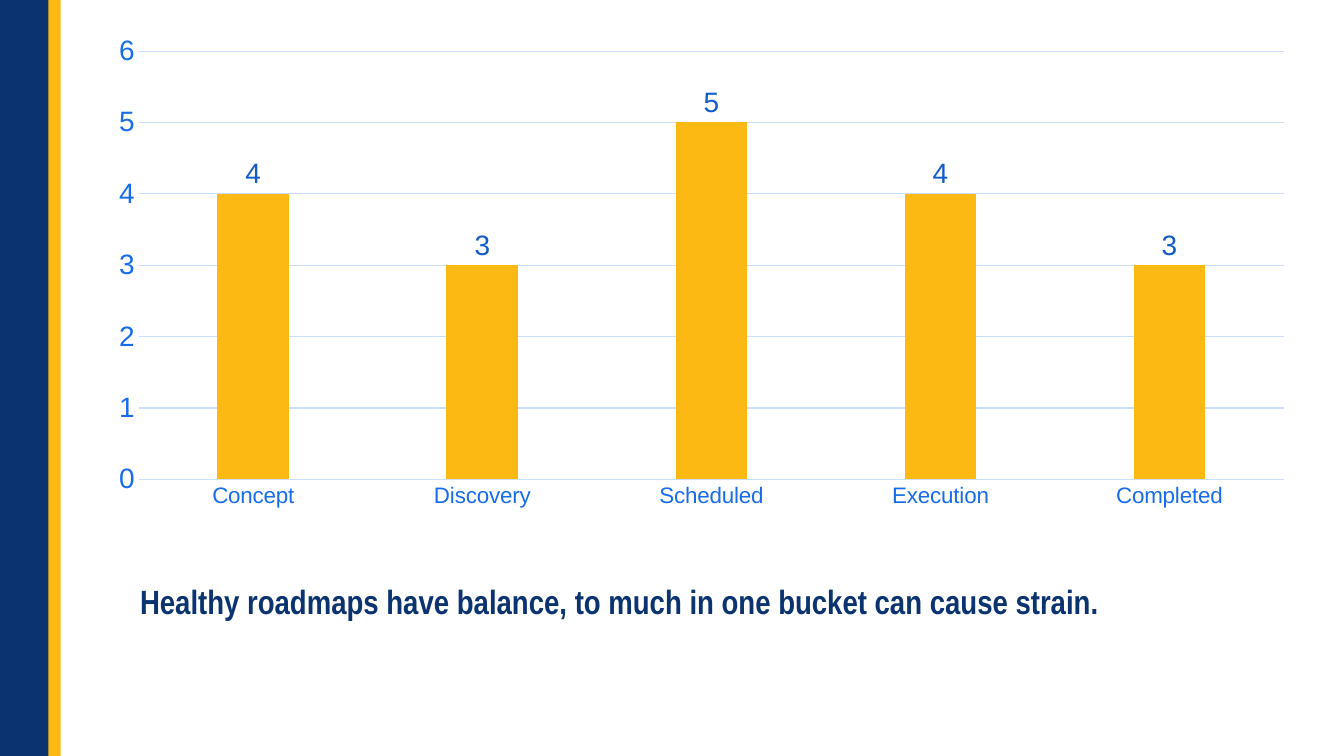
"""Build a slide charting roadmap items per stage, with a takeaway line."""
from dataclasses import dataclass

from pptx import Presentation
from pptx.chart.axis import CategoryAxis, ValueAxis
from pptx.chart.data import CategoryChartData
from pptx.dml.color import RGBColor
from pptx.enum.chart import XL_CHART_TYPE, XL_LABEL_POSITION, XL_TICK_MARK
from pptx.enum.shapes import MSO_SHAPE
from pptx.enum.text import MSO_ANCHOR
from pptx.slide import Slide
from pptx.text.text import Font
from pptx.util import Cm, Pt

COLUMNS = XL_CHART_TYPE.COLUMN_CLUSTERED
OUTSIDE_END = XL_LABEL_POSITION.OUTSIDE_END
NO_TICK = XL_TICK_MARK.NONE
RECTANGLE = MSO_SHAPE.RECTANGLE
MIDDLE = MSO_ANCHOR.MIDDLE

COLORS = {
    "navy": "0A3370",
    "gold": "FDB913",
    "axis": "176CEA",
    "value": "125CC9",
    "grid": "CADDFA",
}
SLIDE_WIDTH, SLIDE_HEIGHT = 33.87, 19.05
TAKEAWAY = "Healthy roadmaps have balance, to much in one bucket can cause strain."


@dataclass(frozen=True)
class Stripe:
    left: float
    width: float
    color: str


@dataclass(frozen=True)
class Stage:
    name: str
    items: int


STRIPES = [Stripe(0, 1.24, "navy"), Stripe(1.22, 0.31, "gold")]
STAGES = [
    Stage("Concept", 4),
    Stage("Discovery", 3),
    Stage("Scheduled", 5),
    Stage("Execution", 4),
    Stage("Completed", 3),
]


def rgb(color: str) -> RGBColor:
    return RGBColor.from_string(COLORS[color])


def set_font(font: Font, size: float, color: str, name: str = "Arial") -> None:
    font.name = name
    font.size = Pt(size)
    font.color.rgb = rgb(color)


def draw_stripe(slide: Slide, stripe: Stripe) -> None:
    band = slide.shapes.add_shape(
        RECTANGLE, Cm(stripe.left), Cm(0), Cm(stripe.width), Cm(SLIDE_HEIGHT)
    )
    band.shadow.inherit = False
    band.fill.solid()
    band.fill.fore_color.rgb = rgb(stripe.color)
    band.line.fill.background()


def draw_takeaway(slide: Slide) -> None:
    takeaway = slide.shapes.add_textbox(Cm(3.28), Cm(13.54), Cm(30.58), Cm(3.33))
    frame = takeaway.text_frame
    frame.word_wrap = True
    frame.vertical_anchor = MIDDLE
    paragraph = frame.paragraphs[0]
    paragraph.text = TAKEAWAY
    paragraph.line_spacing = 0.9
    set_font(paragraph.font, 24, "navy", "Arial Narrow")
    paragraph.font.bold = True


def style_axis(axis: CategoryAxis | ValueAxis, size: float) -> None:
    axis.major_tick_mark = NO_TICK
    axis.minor_tick_mark = NO_TICK
    set_font(axis.tick_labels.font, size, "axis")


def draw_stage_chart(slide: Slide) -> None:
    stage_counts = CategoryChartData(number_format="General")
    stage_counts.categories = [stage.name for stage in STAGES]
    stage_counts.add_series("Series 1", [stage.items for stage in STAGES])
    chart = slide.shapes.add_chart(
        COLUMNS, Cm(2.39), Cm(0.64), Cm(30.58), Cm(12.4), stage_counts
    ).chart
    chart.has_title = False
    chart.has_legend = False
    set_font(chart.font, 10, "navy")

    style_axis(chart.category_axis, 16)
    style_axis(chart.value_axis, 20)
    chart.value_axis.minimum_scale = 0
    chart.value_axis.maximum_scale = 6
    chart.value_axis.major_unit = 1
    chart.value_axis.format.line.fill.background()
    for line in (
        chart.category_axis.format.line,
        chart.value_axis.major_gridlines.format.line,
    ):
        line.color.rgb = rgb("grid")
        line.width = Pt(0.75)

    plot = chart.plots[0]
    plot.vary_by_categories = False
    plot.gap_width = 219
    plot.overlap = -27
    columns = plot.series[0]
    columns.format.fill.solid()
    columns.format.fill.fore_color.rgb = rgb("gold")
    counts = columns.data_labels
    counts.show_value = True
    counts.position = OUTSIDE_END
    set_font(counts.font, 20, "value")


def main() -> None:
    presentation = Presentation()
    presentation.slide_width = Cm(SLIDE_WIDTH)
    presentation.slide_height = Cm(SLIDE_HEIGHT)
    slide = presentation.slides.add_slide(presentation.slide_layouts[6])
    for stripe in STRIPES:
        draw_stripe(slide, stripe)
    draw_takeaway(slide)
    draw_stage_chart(slide)
    presentation.save("out.pptx")


if __name__ == "__main__":
    main()
